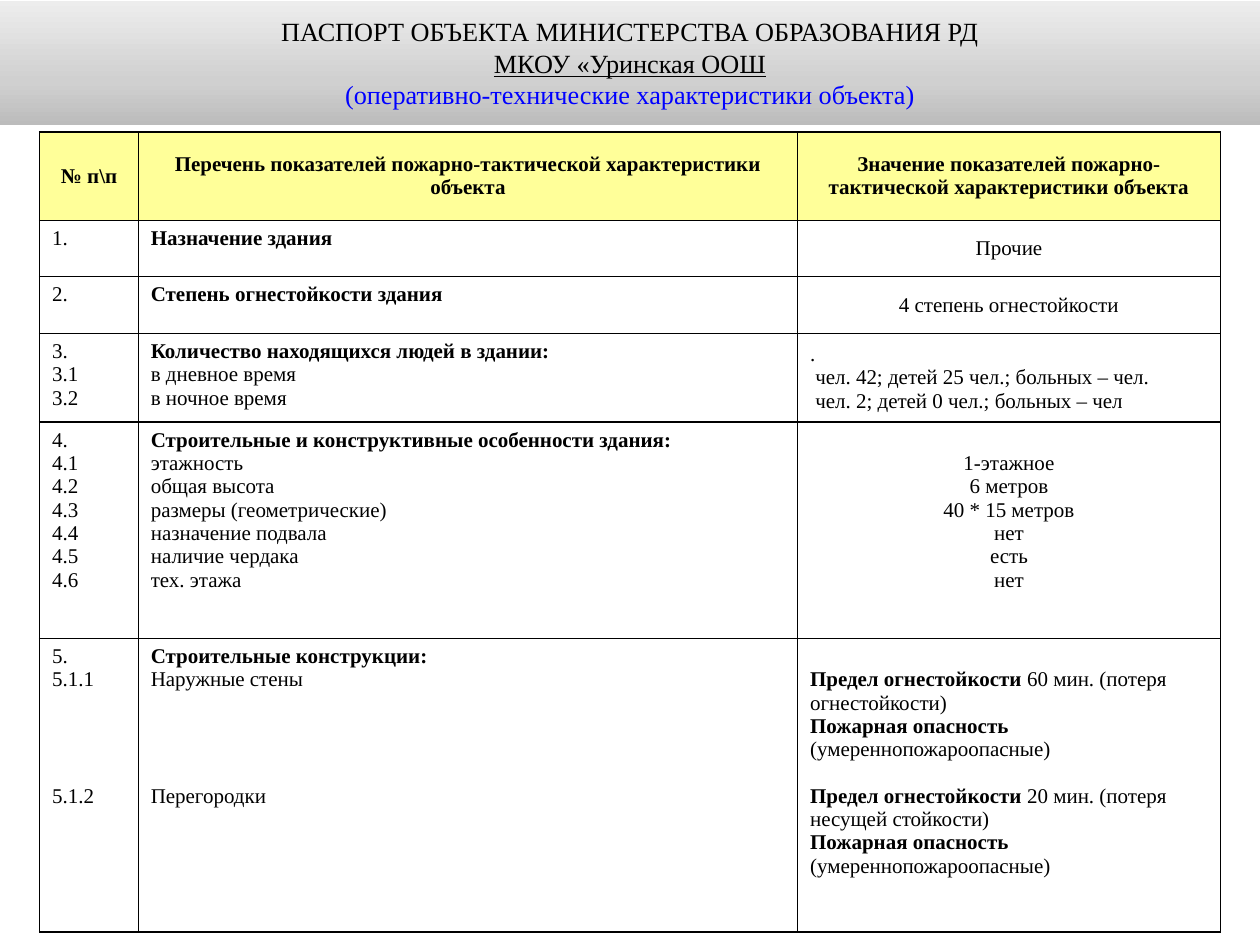
from copy import deepcopy
from dataclasses import dataclass

from lxml import etree
from pptx import Presentation
from pptx import util as u
from pptx.dml.color import RGBColor
from pptx.enum import shapes, text
from pptx.oxml.ns import qn

COLORS = {
    "ink": "000000", "accent": "0000FF", "heading": "FFFF99", "paper": "FFFFFF",
    "band_bottom": "BCBCBC", "band_middle": "D0D0D0", "band_top": "EDEDED",
}
FONT = "Times New Roman"
LINE_PT = 13.3  # height of one 12 pt line
CENTER, LEFT = text.PP_ALIGN.CENTER, text.PP_ALIGN.LEFT
MIDDLE, TOP = text.MSO_ANCHOR.MIDDLE, text.MSO_ANCHOR.TOP
COLUMN_WIDTHS = (1.99, 13.29, 8.52)
ROW_HEIGHTS = (1.78, 1.14, 1.14, 1.79, 4.36, 5.92)


@dataclass
class Line:
    """A bold lead, then plain words, set some text lines lower than usual."""
    bold: str = ""
    plain: str = ""
    gap: int = 0


@dataclass
class Entry:
    lines: list[Line]
    align: text.PP_ALIGN = LEFT
    anchor: text.MSO_ANCHOR = TOP
    color: str = "paper"
    lowered: int = 0


def plain(*words: str) -> list[Line]:
    return [Line(plain=word) for word in words]


def heading(words: str) -> Entry:
    return Entry([Line(words)], CENTER, MIDDLE, "heading")


ROWS = [
    [heading("№ п\\п"),
     heading("Перечень показателей пожарно-тактической характеристики объекта"),
     heading("Значение показателей пожарно-тактической характеристики объекта")],
    [Entry(plain("1.")), Entry([Line("Назначение здания")]),
     Entry(plain("Прочие"), CENTER, MIDDLE)],
    [Entry(plain("2.")), Entry([Line("Степень огнестойкости здания")]),
     Entry(plain("4 степень огнестойкости"), CENTER, MIDDLE)],
    [Entry(plain("3.", "3.1", "3.2")),
     Entry([Line("Количество находящихся людей в здании:"),
            *plain("в дневное время", "в ночное время")]),
     Entry(plain(".", " чел. 42; детей 25 чел.; больных – чел.",
                 " чел. 2; детей 0 чел.; больных – чел"), anchor=MIDDLE)],
    [Entry(plain("4.", "4.1", "4.2", "4.3", "4.4", "4.5", "4.6")),
     Entry([Line("Строительные и конструктивные особенности здания:"),
            *plain("этажность", "общая высота", "размеры (геометрические)",
                   "назначение подвала", "наличие чердака", "тех. этажа")]),
     Entry(plain("1-этажное", "6 метров", "40 * 15 метров", "нет", "есть", "нет"),
           CENTER, lowered=1)],
    [Entry([*plain("5.", "5.1.1"), Line(plain="5.1.2", gap=4)]),
     Entry([Line("Строительные конструкции:"), Line(plain="Наружные стены"),
            Line(plain="Перегородки", gap=4)]),
     Entry([Line("Предел огнестойкости ", "60 мин. (потеря огнестойкости)"),
            Line("Пожарная опасность ", "(умереннопожароопасные)"),
            Line("Предел огнестойкости ", "20 мин. (потеря несущей стойкости)", gap=1),
            Line("Пожарная опасность"), Line(plain="(умереннопожароопасные)")],
           lowered=1)],
]


def rgb(name: str) -> RGBColor:
    return RGBColor.from_string(COLORS[name])


def add_run(paragraph, words: str, size: float, color: str = "ink", **extra) -> None:
    run = paragraph.add_run()
    run.text = words
    run.font.color.rgb = rgb(color)
    for key, value in {"name": FONT, "size": u.Pt(size), **extra}.items():
        setattr(run.font, key, value)


def paragraph_at(frame, index: int):
    return frame.add_paragraph() if index else frame.paragraphs[0]


def add_borders(cell) -> None:
    properties = cell._tc.get_or_add_tcPr()
    for position, side in enumerate(("a:lnL", "a:lnR", "a:lnT", "a:lnB")):
        border = etree.Element(qn(side), w=str(u.Pt(1)))
        solid = etree.SubElement(border, qn("a:solidFill"))
        etree.SubElement(solid, qn("a:srgbClr"), val=COLORS["ink"])
        properties.insert(position, border)


def fill_cell(cell, entry: Entry) -> None:
    cell.fill.solid()
    cell.fill.fore_color.rgb = rgb(entry.color)
    layout = {
        "vertical_anchor": entry.anchor,
        "margin_left": u.Cm(0.25), "margin_right": u.Cm(0.25),
        "margin_top": u.Cm(0.13) + u.Pt(LINE_PT * entry.lowered),
        "margin_bottom": u.Cm(0.13),
    }
    for key, value in layout.items():
        setattr(cell, key, value)
    add_borders(cell)
    for index, line in enumerate(entry.lines):
        paragraph = paragraph_at(cell.text_frame, index)
        paragraph.alignment = entry.align
        if line.gap:
            paragraph.space_before = u.Pt(LINE_PT * line.gap)
        for words, bold in ((line.bold, True), (line.plain, False)):
            if words:
                add_run(paragraph, words, 12, bold=bold)


def add_passport_table(slide) -> None:
    table = slide.shapes.add_table(
        len(ROWS), len(COLUMN_WIDTHS), u.Cm(0.8), u.Cm(2.66),
        u.Cm(sum(COLUMN_WIDTHS)), u.Cm(sum(ROW_HEIGHTS))).table
    table.first_row = table.horz_banding = False
    for column, width in zip(table.columns, COLUMN_WIDTHS):
        column.width = u.Cm(width)
    for row, height, entries in zip(table.rows, ROW_HEIGHTS, ROWS):
        row.height = u.Cm(height)
        for cell, entry in zip(row.cells, entries):
            fill_cell(cell, entry)


def add_title_band(slide) -> None:
    band = slide.shapes.add_shape(
        shapes.MSO_SHAPE.RECTANGLE, 0, u.Cm(0.02), u.Cm(25.4), u.Cm(2.5))
    band.shadow.inherit = False
    band.line.fill.background()
    band.fill.gradient()
    band.fill.gradient_angle = 90
    stop_list = band._element.spPr.find(".//" + qn("a:gsLst"))
    stop_list.insert(1, deepcopy(stop_list[0]))
    stops = (("band_bottom", 0), ("band_middle", 0.35), ("band_top", 1))
    for stop, (color, position) in zip(band.fill.gradient_stops, stops):
        stop.color.rgb = rgb(color)
        stop.position = position
    frame = band.text_frame
    frame.word_wrap = True
    frame.vertical_anchor = MIDDLE
    titles = (
        ("ПАСПОРТ ОБЪЕКТА МИНИСТЕРСТВА ОБРАЗОВАНИЯ РД", {}),
        ("МКОУ «Уринская ООШ", {"underline": True}),
        ("(оперативно-технические характеристики объекта)", {"color": "accent"}),
    )
    for index, (words, style) in enumerate(titles):
        paragraph = paragraph_at(frame, index)
        paragraph.alignment = CENTER
        add_run(paragraph, words, 15, **style)


def main() -> None:
    deck = Presentation()
    deck.slide_width, deck.slide_height = u.Cm(25.4), u.Cm(19.05)
    slide = deck.slides.add_slide(deck.slide_layouts[6])
    add_passport_table(slide)
    add_title_band(slide)
    deck.save("out.pptx")


if __name__ == "__main__":
    main()
